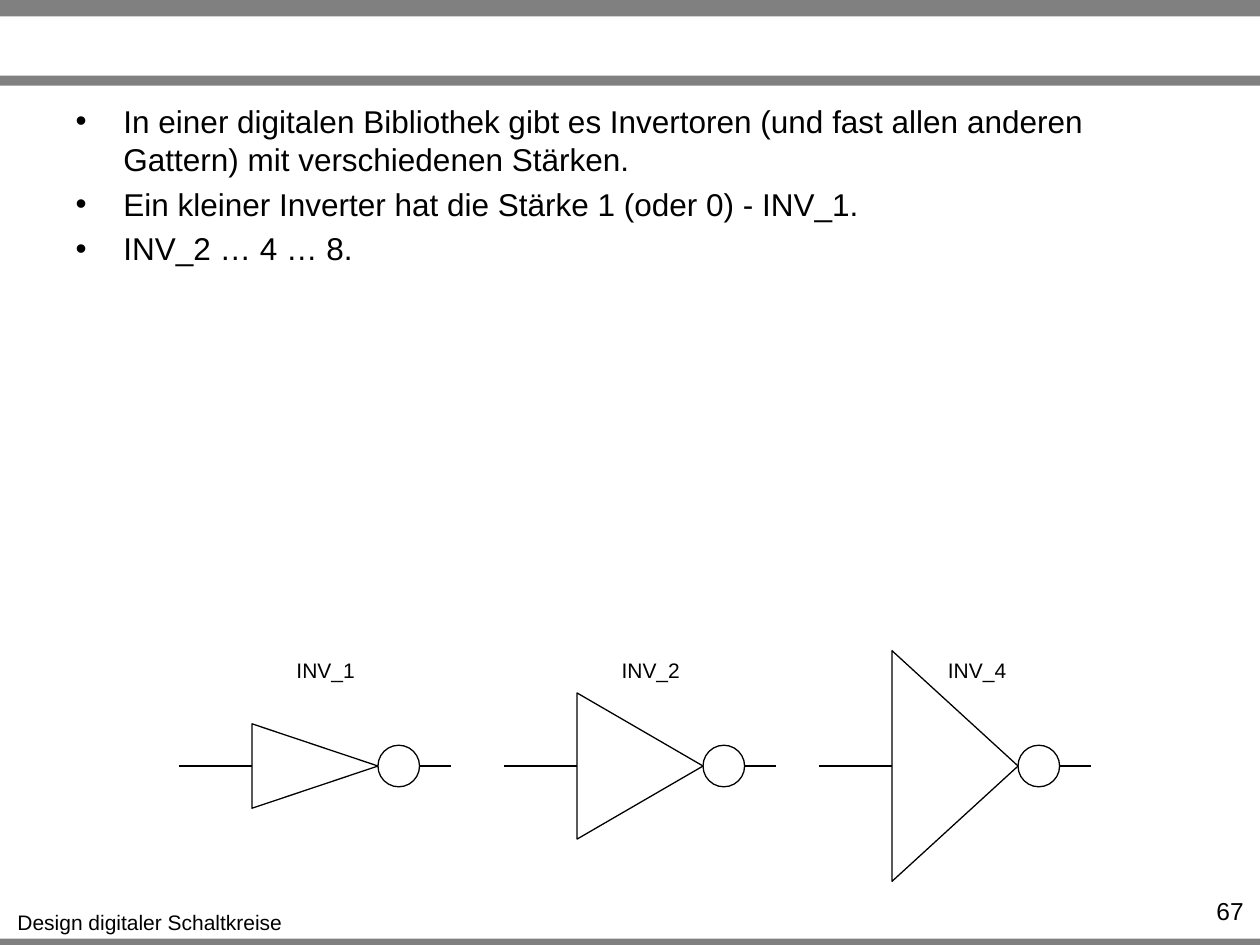
from lxml import etree
from pptx import Presentation
from pptx.dml.color import RGBColor
from pptx.enum.shapes import MSO_CONNECTOR, MSO_SHAPE
from pptx.enum.text import MSO_ANCHOR, MSO_AUTO_SIZE, PP_ALIGN
from pptx.oxml.ns import qn
from pptx.util import Inches, Pt

COLORS = {"ink": "000000", "bar": "808080", "paper": "FFFFFF"}
FONT = "Arial"
BULLETS = [
    "In einer digitalen Bibliothek gibt es Invertoren (und fast allen anderen "
    "Gattern) mit verschiedenen Stärken.",
    "Ein kleiner Inverter hat die Stärke 1 (oder 0) - INV_1.",
    "INV_2 … 4 … 8.",
]
INVERTERS = [
    ("INV_1", 1.42, 2.25, 0.67),
    ("INV_2", 4.0, 4.83, 1.16),
    ("INV_4", 6.5, 7.42, 1.83),
]
AXIS_Y = 6.08
LEAD = 0.58
GATE_LENGTH = 1
BUBBLE = 0.33


def rgb(name):
    return RGBColor.from_string(COLORS[name])


def format_font(font, size):
    font.name = FONT
    font.size = Pt(size)
    font.color.rgb = rgb("ink")


def add_text(slide, text, left, top, width, height, size=12,
             align=PP_ALIGN.CENTER, wrap=False):
    sp = slide.shapes.add_textbox(*map(Inches, (left, top, width, height)))
    tf = sp.text_frame
    tf.word_wrap = wrap
    tf.auto_size = MSO_AUTO_SIZE.NONE if wrap else MSO_AUTO_SIZE.SHAPE_TO_FIT_TEXT
    p = tf.paragraphs[0]
    p.alignment = align
    r = p.add_run()
    r.text = text
    format_font(r.font, size)


def add_shape(slide, kind, left, top, width, height, fill=None, outline=True):
    sp = slide.shapes.add_shape(kind, *map(Inches, (left, top, width, height)))
    sp.shadow.inherit = False
    if fill:
        sp.fill.solid()
        sp.fill.fore_color.rgb = rgb(fill)
    else:
        sp.fill.background()
    if outline:
        sp.line.color.rgb = rgb("ink")
        sp.line.width = Pt(0.75)
    else:
        sp.line.fill.background()
    return sp


def add_wire(slide, left, right, y):
    line = slide.shapes.add_connector(
        MSO_CONNECTOR.STRAIGHT, *map(Inches, (left, y, right, y)))
    line.line.color.rgb = rgb("ink")
    line.line.width = Pt(0.75)
    etree.SubElement(line._element.spPr, qn("a:effectLst"))


def add_frame(slide, width):
    for top, height in ((7.45, 0.08), (0, 0.13), (0.6, 0.08)):
        add_shape(slide, MSO_SHAPE.RECTANGLE, 0, top, width, height,
                  fill="bar", outline=False)
    add_text(slide, "Design digitaler Schaltkreise", 0.03, 7.17, 2.32, 0.3)
    add_text(slide, "67", 9.1, 7.06, 0.87, 0.24, size=14,
             align=PP_ALIGN.RIGHT, wrap=True)


def fill_body(body, left, top, width, height):
    body.left, body.top, body.width, body.height = map(
        Inches, (left, top, width, height))
    tf = body.text_frame
    tf.auto_size = MSO_AUTO_SIZE.NONE
    tf.vertical_anchor = MSO_ANCHOR.TOP
    for i, text in enumerate(BULLETS):
        p = tf.add_paragraph() if i else tf.paragraphs[0]
        p.space_before = Pt(4 if i else 0)
        pPr = p._p.get_or_add_pPr()
        pPr.set("marL", str(Inches(0.38)))
        pPr.set("indent", str(-Inches(0.38)))
        etree.SubElement(pPr, qn("a:buChar")).set("char", "•")
        r = p.add_run()
        r.text = text
        format_font(r.font, 18)


def add_inverter(slide, left, axis, height):
    base = left + LEAD
    tip = base + GATE_LENGTH
    add_wire(slide, left, base, axis)
    add_wire(slide, tip, tip + LEAD, axis)
    add_shape(slide, MSO_SHAPE.OVAL, tip, axis - BUBBLE / 2, BUBBLE, BUBBLE,
              fill="paper")
    gate = add_shape(slide, MSO_SHAPE.ISOSCELES_TRIANGLE,
                     base + (GATE_LENGTH - height) / 2, axis - GATE_LENGTH / 2,
                     height, GATE_LENGTH)
    gate.rotation = 90


def main():
    prs = Presentation()
    prs.slide_width, prs.slide_height = Inches(10), Inches(7.5)
    slide = prs.slides.add_slide(prs.slide_layouts[1])
    title = slide.shapes.title
    title._element.getparent().remove(title._element)
    add_frame(slide, 10)
    fill_body(slide.placeholders[1], 0.5, 0.76, 9, 1.41)
    for name, left, label_left, height in INVERTERS:
        add_inverter(slide, left, AXIS_Y, height)
        add_text(slide, name, label_left, 5.17, 0.67, 0.3)
    prs.save("out.pptx")


if __name__ == "__main__":
    main()
